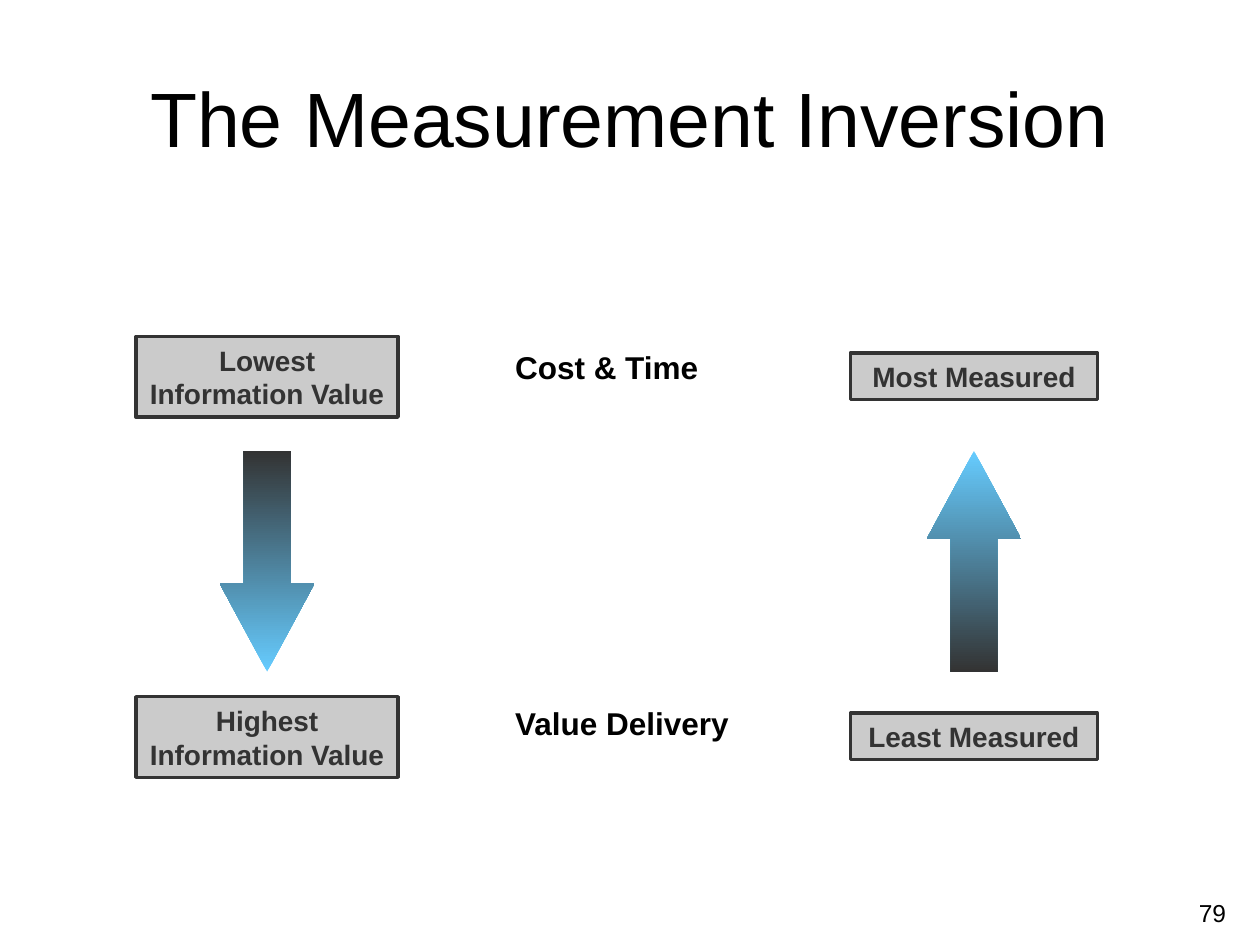
from dataclasses import dataclass

from lxml import etree
from pptx import Presentation
from pptx import util as u
from pptx.dml.color import RGBColor
from pptx.enum import shapes, text
from pptx.oxml.ns import qn


@dataclass(frozen=True)
class Theme:
    font: str = "Arial"
    black: RGBColor = RGBColor(0x00, 0x00, 0x00)
    dark: RGBColor = RGBColor(0x33, 0x33, 0x33)
    sky: RGBColor = RGBColor(0x66, 0xCC, 0xFF)
    title: int = 44
    caption: int = 18
    label: int = 16
    number: int = 14


THEME = Theme()


def inches(box):
    return [u.Inches(length) for length in box]


def write(frame, wording, size, color, bold=False,
          align=text.PP_ALIGN.LEFT, anchor=text.MSO_ANCHOR.TOP):
    frame.word_wrap = True
    frame.vertical_anchor = anchor
    frame.text = wording
    for para in frame.paragraphs:
        para.alignment = align
        for span in para.runs:
            span.font.name = THEME.font
            span.font.size = u.Pt(size)
            span.font.bold = bold
            span.font.color.rgb = color


def add_text(page, box, wording, size, **style):
    frame = page.shapes.add_textbox(*inches(box)).text_frame
    write(frame, wording, size, THEME.black, **style)


def add_label(page, box, wording):
    label = page.shapes.add_shape(shapes.MSO_SHAPE.RECTANGLE, *inches(box))
    label.shadow.inherit = False
    label.fill.solid()
    label.fill.fore_color.rgb = THEME.dark
    color = label.fill._xPr.find(qn("a:solidFill"))[0]
    etree.SubElement(color, qn("a:alpha"), val="25000")
    label.line.color.rgb = THEME.dark
    label.line.width = u.Pt(2)
    write(label.text_frame, wording, THEME.label, THEME.dark, bold=True,
          align=text.PP_ALIGN.CENTER, anchor=text.MSO_ANCHOR.MIDDLE)


def add_arrow(page, box, rotation):
    arrow = page.shapes.add_shape(shapes.MSO_SHAPE.UP_ARROW, *inches(box))
    arrow.shadow.inherit = False
    arrow.rotation = rotation
    arrow.adjustments[0] = 0.49
    arrow.adjustments[1] = 0.93
    arrow.line.fill.background()
    arrow.fill.gradient()
    arrow.fill.gradient_angle = 270
    stops = zip(arrow.fill.gradient_stops, (0, 1), (THEME.sky, THEME.dark))
    for stop, position, color in stops:
        stop.position = position
        stop.color.rgb = color


def add_scale(page, box, label_height, labels, rotation):
    left, top, width, height = box
    tops = (top, top + height - label_height)
    for label_top, wording in zip(tops, labels):
        add_label(page, (left, label_top, width, label_height), wording)
    arrow_width, arrow_height = 0.75, 1.75
    arrow_left = left + (width - arrow_width) / 2
    add_arrow(page, (arrow_left, 3.58, arrow_width, arrow_height), rotation)


def add_captions(page, box, captions):
    left, top, width, height = box
    caption_height = 0.4
    tops = (top, top + height - caption_height)
    for caption_top, wording in zip(tops, captions):
        add_text(page, (left, caption_top, width, caption_height), wording,
                 THEME.caption, bold=True)


def main():
    deck = Presentation()
    deck.slide_width, deck.slide_height = u.Inches(10), u.Inches(7.5)
    page = deck.slides.add_slide(deck.slide_layouts[6])
    add_text(page, (0.5, 0.3, 9, 1.25), "The Measurement Inversion",
             THEME.title, align=text.PP_ALIGN.CENTER,
             anchor=text.MSO_ANCHOR.MIDDLE)
    add_scale(page, (1.08, 2.67, 2.08, 3.5), 0.64,
              ("Lowest\nInformation Value", "Highest Information Value"), 180)
    add_scale(page, (6.75, 2.8, 1.96, 3.23), 0.37,
              ("Most Measured", "Least Measured"), 0)
    add_captions(page, (3.99, 2.71, 1.9, 3.23),
                 ("Cost & Time", "Value Delivery"))
    add_text(page, (7.5, 7.08, 2.33, 0.27), "79", THEME.number,
             align=text.PP_ALIGN.RIGHT)
    deck.save("out.pptx")


if __name__ == "__main__":
    main()
